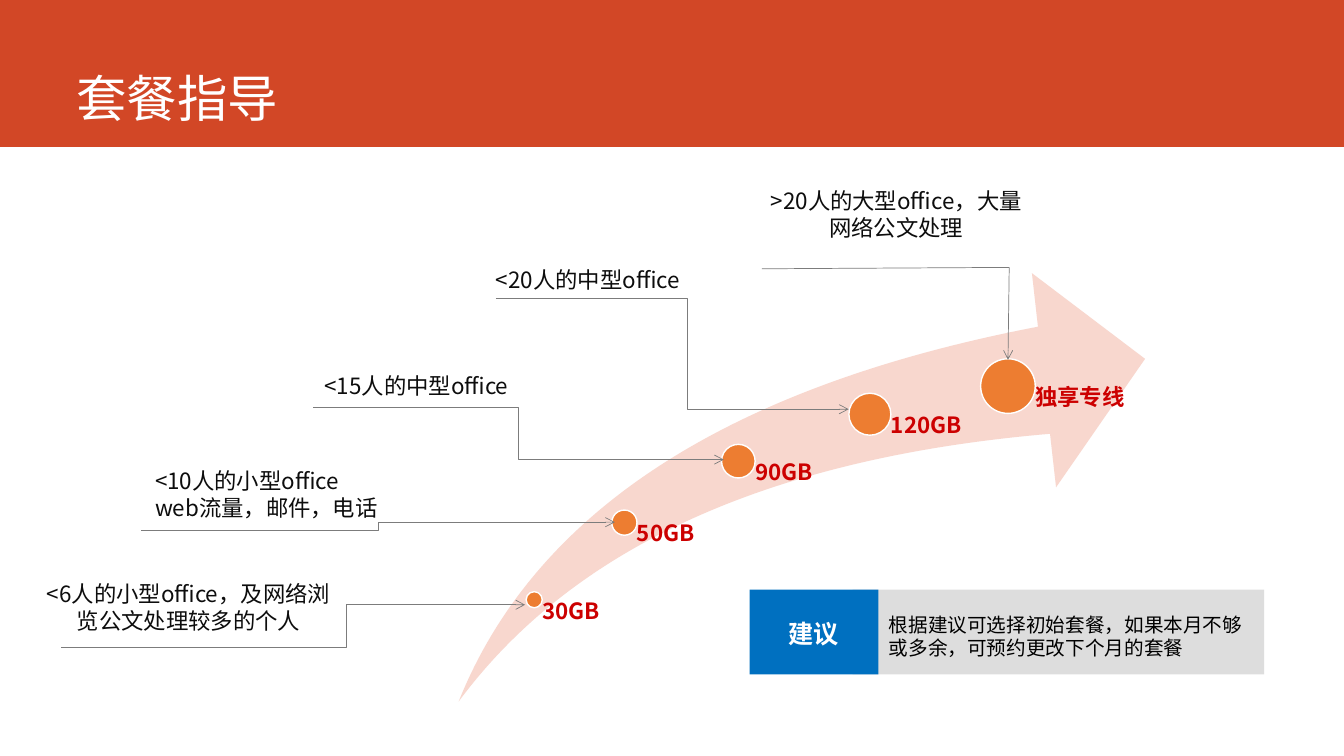
from pptx import Presentation
from pptx.dml.color import RGBColor
from pptx.enum.shapes import MSO_CONNECTOR, MSO_SHAPE
from pptx.enum.text import MSO_ANCHOR, PP_ALIGN
from pptx.oxml.ns import qn
from pptx.util import Pt
from lxml import etree

RECT, OVAL, SWOOSH = MSO_SHAPE.RECTANGLE, MSO_SHAPE.OVAL, MSO_SHAPE.SWOOSH_ARROW
ELBOW, LINE = MSO_CONNECTOR.ELBOW, MSO_CONNECTOR.STRAIGHT
LEFT, CENTER = PP_ALIGN.LEFT, PP_ALIGN.CENTER
TOP, MIDDLE, BOTTOM = MSO_ANCHOR.TOP, MSO_ANCHOR.MIDDLE, MSO_ANCHOR.BOTTOM
FONT = "Noto Sans CJK SC"
FLOOR = 501
COLORS = {
    "band": "D24726", "white": "FFFFFF", "swoosh": "F8D7CE", "dot": "ED7D31",
    "plan": "CC0000", "gray": "DDDDDD", "blue": "0070C0", "black": "000000",
    "text": "0D0D0D", "line": "7C7C7C",
}
PLANS = [
    ("30GB", 381.6, 428.4, 11.5, 64),
    ("50GB", 446, 373.3, 18, 81),
    ("90GB", 527.4, 329.4, 24, 94),
    ("120GB", 621.4, 295.9, 30, 98),
    ("独享专线", 720, 275.8, 39, 103),
]
USERS = [
    (["<6人的小型office，及网络浏览公文处理较多的个人"], 18.7, 401.8, 232, CENTER),
    (["<10人的小型office", "web流量，邮件，电话"], 103.7, 321.1, 209, LEFT),
    (["<15人的中型office"], 193, 243.4, 209, CENTER),
    (["<20人的中型office"], 315.4, 167.8, 209, CENTER),
    ([">20人的大型office，大量网络公文处理"], 535.7, 121, 209, CENTER),
]
BENDS = [
    (43.9, 462.2, 375.1, 432, 0.615),
    (100.8, 378.7, 439.2, 373, 0.5),
    (223.9, 290.9, 517, 328.3, 0.5),
    (354.2, 213.1, 606.2, 292.3, 0.544),
]


def color(key):
    return RGBColor.from_string(COLORS[key])


def add_shape(slide, kind, box, fill, edge=None):
    shape = slide.shapes.add_shape(kind, *map(Pt, box))
    shape.shadow.inherit = False
    shape.fill.solid()
    shape.fill.fore_color.rgb = color(fill)
    if edge:
        shape.line.color.rgb = color(edge)
        shape.line.width = Pt(1)
    else:
        shape.line.fill.background()
    return shape


def set_text(shape, lines, size, tint, bold=False, align=LEFT, anchor=TOP, wrap=True):
    frame = shape.text_frame
    frame.word_wrap = wrap
    frame.vertical_anchor = anchor
    frame.text = "\n".join(lines)
    for para in frame.paragraphs:
        para.alignment = align
        font = para.font
        font.size, font.bold, font.name = Pt(size), bold, FONT
        font.color.rgb = color(tint)
        props = para._p.pPr.find(qn("a:defRPr"))
        etree.SubElement(props, qn("a:ea"), typeface=FONT)
    return frame


def add_text(slide, box, lines, size, tint, **style):
    shape = slide.shapes.add_textbox(*map(Pt, box))
    return set_text(shape, lines, size, tint, **style)


def add_plan(slide, name, x, y, size, width):
    half = size / 2
    add_shape(slide, OVAL, (x - half, y - half, size, size), "dot", "white")
    frame = add_text(slide, (x, y, width, FLOOR - y), [name], 16, "plan", bold=True)
    frame.margin_left = Pt(half)
    frame.margin_top = frame.margin_right = frame.margin_bottom = 0
    frame.paragraphs[0].line_spacing = 0.9


def add_user(slide, lines, x, y, width, align):
    shape = add_shape(slide, RECT, (x, y, width, 64), "white", "white")
    set_text(shape, lines, 16, "text", align=align, anchor=MIDDLE)


def add_line(slide, kind, ends, arrow=True, bend=None):
    line = slide.shapes.add_connector(kind, *map(Pt, ends))
    line.line.color.rgb = color("line")
    line.line.width = Pt(0.5)
    props = line._element.spPr
    if arrow:
        etree.SubElement(props.find(qn("a:ln")), qn("a:tailEnd"), type="arrow")
    if bend:
        guides = props.find(qn("a:prstGeom")).find(qn("a:avLst"))
        etree.SubElement(guides, qn("a:gd"), name="adj1", fmla=f"val {round(bend * 100000)}")
    etree.SubElement(props, qn("a:effectLst"))


def add_tip(slide):
    add_shape(slide, RECT, (609, 421.2, 294, 60.5), "gray")
    add_shape(slide, RECT, (535.5, 421.2, 92, 60.5), "blue")
    add_text(slide, (555.8, 437.8, 51, 28.8), ["建议"], 18, "white",
             bold=True, align=CENTER, wrap=False)
    add_text(slide, (627.8, 434.2, 275, 41),
             ["根据建议可选择初始套餐，如果本月不够或多余，可预约更改下个月的套餐"], 14, "black")


def main():
    deck = Presentation()
    deck.slide_width, deck.slide_height = Pt(960), Pt(540)
    slide = deck.slides.add_slide(deck.slide_layouts[6])
    add_shape(slide, RECT, (0, 0, 960, 105), "band")
    add_text(slide, (47.5, 0, 846.7, 95), ["套餐指导"], 36, "white", anchor=BOTTOM)
    swoosh = add_shape(slide, SWOOSH, (327.6, 195.1, 490.3, 306), "swoosh")
    swoosh.adjustments[0] = swoosh.adjustments[1] = 0.25
    for plan in PLANS:
        add_plan(slide, *plan)
    add_tip(slide)
    for user in USERS:
        add_user(slide, *user)
    for *ends, bend in BENDS:
        add_line(slide, ELBOW, ends, bend=bend)
    add_line(slide, LINE, (544.3, 192, 720.9, 191), arrow=False)
    add_line(slide, LINE, (720.9, 191, 720, 257))
    deck.save("out.pptx")


if __name__ == "__main__":
    main()
